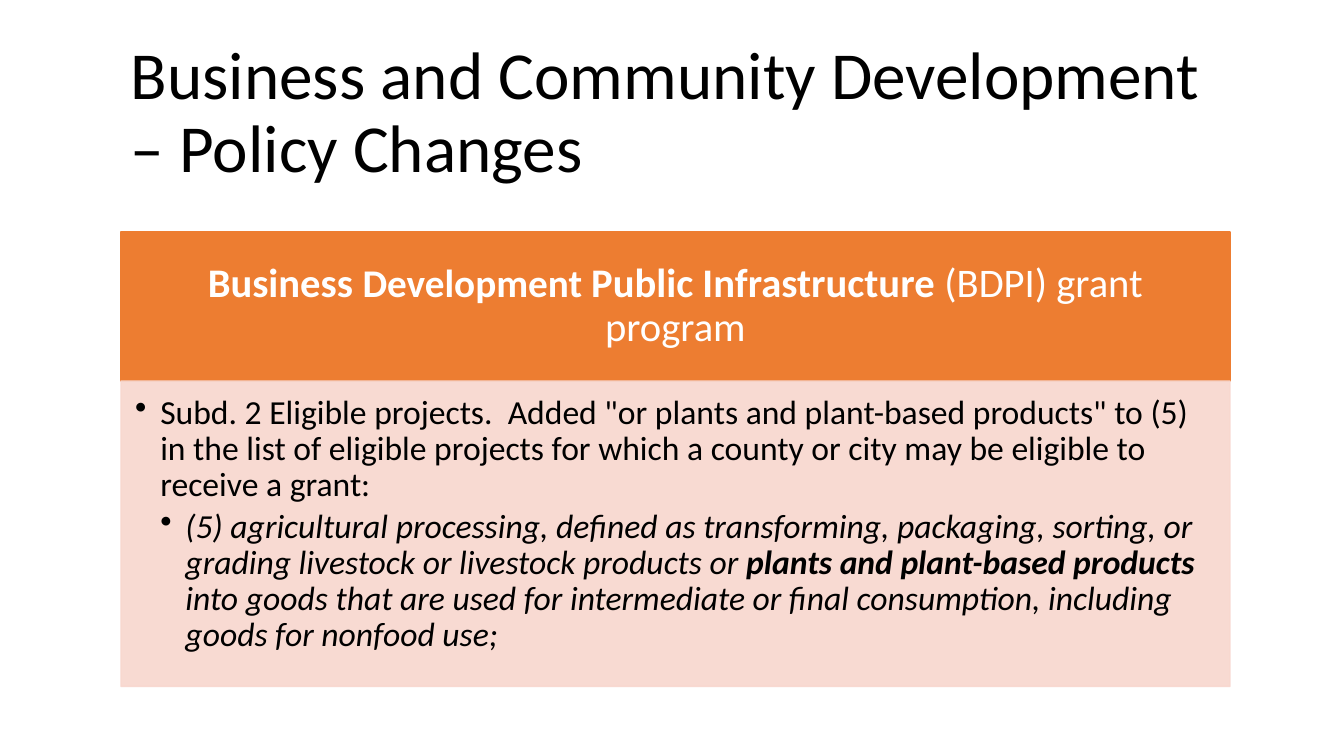
import pptx
import pptx.dml.color
import pptx.enum.shapes
import pptx.enum.text
import pptx.oxml
import pptx.oxml.ns
import pptx.util
from lxml import etree

SLIDE_WIDTH, SLIDE_HEIGHT = 13.33, 7.5
MARGIN = 1.2
CONTENT_WIDTH = 11
FONT = "Calibri"
COLORS = {
    "text": "000000",
    "header": "ED7D31",
    "header_text": "FFFFFF",
    "body": "F8D7CE",
}

TITLE = "Business and Community Development – Policy Changes"
# Each run is (text, size, style letters: b for bold, i for italic).
HEADER_RUNS = [
    ("Business ", 29, "b"),
    ("Development", 28, "b"),
    (" Public Infrastructure", 29, "b"),
    (" (BDPI) grant program", 29, ""),
]
BULLETS = [
    [("Subd. 2 Eligible projects.  Added \"or plants and plant-based products\" to (5) "
      "in the list of eligible projects for which a county or city may be eligible to "
      "receive a grant:", 24, "")],
    [("(5) agricultural processing, defined as transforming, packaging, sorting, or "
      "grading livestock or livestock products or ", 24, "i"),
     ("plants and plant-based products", 24, "bi"),
     (" into goods that are used for intermediate or final consumption, including "
      "goods for nonfood use;", 24, "i")],
]


def rgb(name):
    return pptx.dml.color.RGBColor.from_string(COLORS[name])


def inches(values):
    return [pptx.util.Inches(value) for value in values]


def set_frame(text_frame, insets, anchor):
    """Wrap the text and set the insets in the order left, top, right, bottom."""
    text_frame.word_wrap = True
    text_frame.vertical_anchor = anchor
    (text_frame.margin_left, text_frame.margin_top,
     text_frame.margin_right, text_frame.margin_bottom) = inches(insets)


def write_runs(paragraph, runs, color, space_after=0):
    paragraph.line_spacing = 0.9
    paragraph.space_after = pptx.util.Pt(space_after)
    for text, size, style in runs:
        run = paragraph.add_run()
        run.text = text
        run.font.name = FONT
        run.font.size = pptx.util.Pt(size)
        run.font.bold = "b" in style
        run.font.italic = "i" in style
        run.font.color.rgb = rgb(color)


def add_bullet(paragraph, level, step=0.25):
    paragraph.level = level
    properties = paragraph._p.get_or_add_pPr()
    properties.set("marL", str(pptx.util.Inches(step * (level + 1))))
    properties.set("indent", str(pptx.util.Inches(-step)))
    bullet = etree.SubElement(properties, pptx.oxml.ns.qn("a:buChar"))
    bullet.set("char", "•")


def add_panel(slide, box, color, opacity=100):
    panel = slide.shapes.add_shape(
        pptx.enum.shapes.MSO_SHAPE.RECTANGLE, *inches(box))
    panel.shadow.inherit = False
    panel.fill.solid()
    panel.fill.fore_color.rgb = rgb(color)
    panel.line.color.rgb = rgb(color)
    panel.line.width = pptx.util.Pt(1)
    if opacity < 100:
        for color_element in panel._element.spPr.iter(pptx.oxml.ns.qn("a:srgbClr")):
            alpha = etree.SubElement(color_element, pptx.oxml.ns.qn("a:alpha"))
            alpha.set("val", str(opacity * 1000))
    return panel


def add_title(slide, box):
    text_frame = slide.shapes.add_textbox(*inches(box)).text_frame
    set_frame(text_frame, (0.1, 0.05, 0.1, 0.05), pptx.enum.text.MSO_ANCHOR.BOTTOM)
    write_runs(text_frame.paragraphs[0], [(TITLE, 48, "")], "text")


def add_program_header(slide, box):
    text_frame = add_panel(slide, box, "header").text_frame
    set_frame(text_frame, (0.23, 0.13, 0.23, 0.13), pptx.enum.text.MSO_ANCHOR.MIDDLE)
    paragraph = text_frame.paragraphs[0]
    paragraph.alignment = pptx.enum.text.PP_ALIGN.CENTER
    write_runs(paragraph, HEADER_RUNS, "header_text")


def add_program_details(slide, box):
    text_frame = add_panel(slide, box, "body", opacity=90).text_frame
    set_frame(text_frame, (0.14, 0.14, 0.19, 0.21), pptx.enum.text.MSO_ANCHOR.TOP)
    for level, runs in enumerate(BULLETS):
        paragraph = text_frame.add_paragraph() if level else text_frame.paragraphs[0]
        paragraph.alignment = pptx.enum.text.PP_ALIGN.LEFT
        add_bullet(paragraph, level)
        write_runs(paragraph, runs, "text", space_after=3.6)


def add_program_card(slide, box, header_height=1.48):
    left, top, width, height = box
    add_program_header(slide, (left, top, width, header_height))
    add_program_details(
        slide, (left, top + header_height, width, height - header_height))


def main():
    presentation = pptx.Presentation()
    presentation.slide_width = pptx.util.Inches(SLIDE_WIDTH)
    presentation.slide_height = pptx.util.Inches(SLIDE_HEIGHT)
    slide = presentation.slides.add_slide(presentation.slide_layouts[6])
    add_title(slide, (MARGIN, 0.31, CONTENT_WIDTH, 1.59))
    add_program_card(slide, (MARGIN, 2.3, CONTENT_WIDTH, 4.51))
    presentation.save("out.pptx")


if __name__ == "__main__":
    main()
